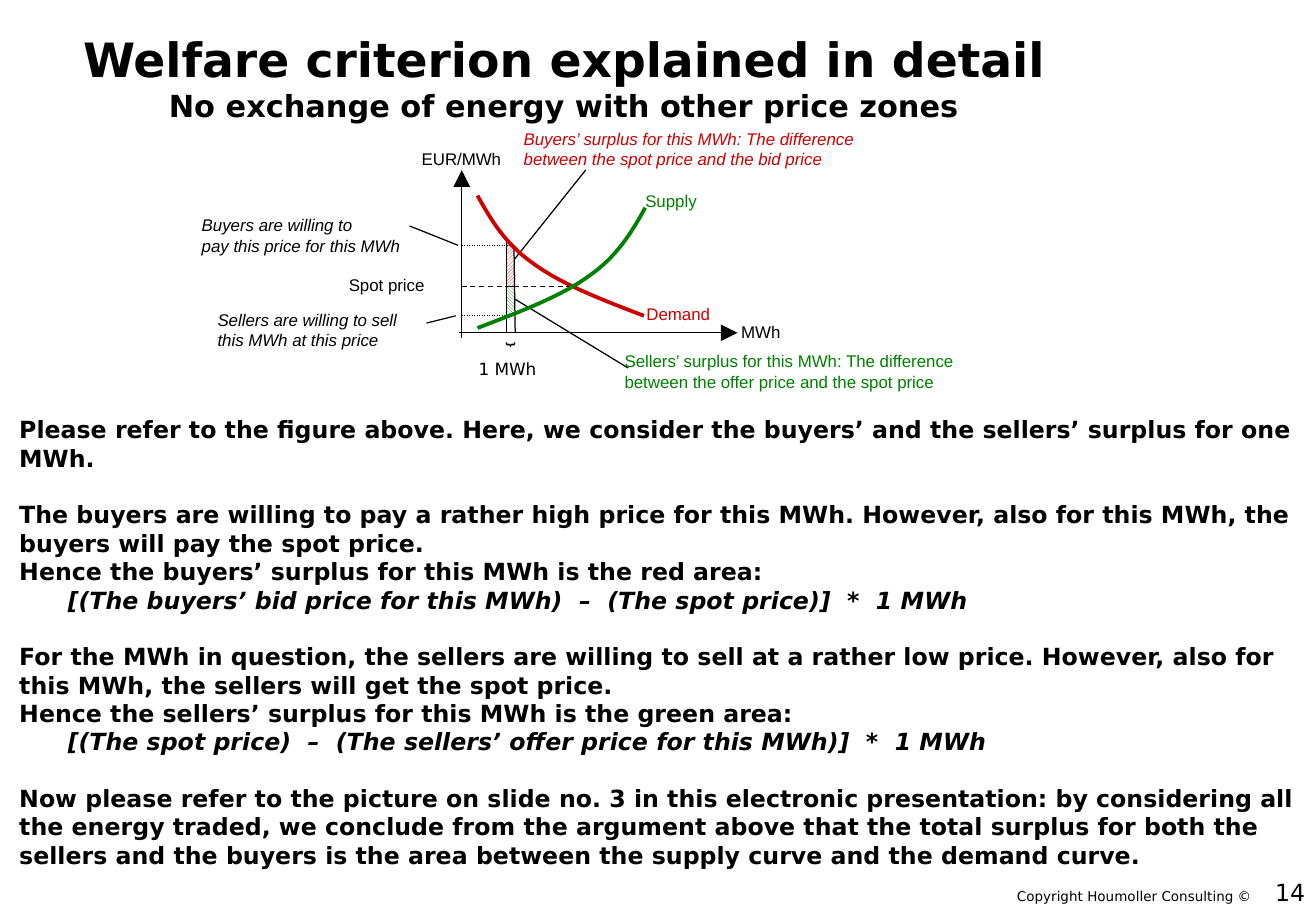
from lxml.etree import SubElement
from pptx import Presentation
from pptx.dml.color import RGBColor
from pptx.enum.dml import MSO_LINE, MSO_PATTERN
from pptx.enum.shapes import MSO_CONNECTOR
from pptx.enum.text import MSO_ANCHOR, PP_ALIGN
from pptx.oxml.ns import qn
from pptx.util import Pt

PX = 9144
BLACK, WHITE, RED, GREEN = "000000", "FFFFFF", "CC0000", "008000"
HEADING_FONT, LABEL_FONT = "DejaVu Sans", "Arial"


def px(length):
    return length * PX


def color(value):
    return RGBColor.from_string(value)


class WelfareSlide:
    def __init__(self, deck):
        self.slide = deck.slides.add_slide(deck.slide_layouts[6])
        self.shapes = self.slide.shapes

    def text(self, box, paragraphs, size=10, font=LABEL_FONT, ink=BLACK, bold=False,
             italic=False, align=PP_ALIGN.LEFT, anchor=MSO_ANCHOR.TOP,
             insets=(10, 5), wrap=True, rotation=0):
        holder = self.shapes.add_textbox(*map(px, box))
        holder.rotation = rotation
        frame = holder.text_frame
        frame.word_wrap = wrap
        frame.vertical_anchor = anchor
        frame.margin_left = frame.margin_right = px(insets[0])
        frame.margin_top = frame.margin_bottom = px(insets[1])
        for index, content in enumerate(paragraphs):
            wording, changes = content if isinstance(content, tuple) else (content, {})
            paragraph = frame.paragraphs[0] if index == 0 else frame.add_paragraph()
            paragraph.alignment = align
            if "indent" in changes:
                paragraph._p.get_or_add_pPr().set("marL", str(px(changes["indent"])))
            if "before" in changes:
                paragraph.space_before = Pt(changes["before"])
            run = paragraph.add_run()
            run.text = wording
            run.font.name = font
            run.font.size = Pt(changes.get("size", size))
            run.font.bold = bold
            run.font.italic = changes.get("italic", italic)
            run.font.color.rgb = color(ink)

    def label(self, box, lines, ink=BLACK, italic=False):
        self.text(box, lines, ink=ink, italic=italic, insets=(9, 4))

    def line(self, start, end, dash=None, arrow=False):
        connector = self.shapes.add_connector(
            MSO_CONNECTOR.STRAIGHT, *map(px, start + end))
        connector.line.color.rgb = color(BLACK)
        connector.line.width = Pt(0.75)
        if dash:
            connector.line.dash_style = dash
        if arrow:
            SubElement(connector.line._get_or_add_ln(), qn("a:headEnd"),
                       type="triangle", w="lg", len="lg")
        SubElement(connector._element.spPr, qn("a:effectLst"))

    def outline(self, points, close):
        builder = self.shapes.build_freeform(*points[0], scale=PX)
        builder.add_line_segments(points[1:], close=close)
        outline = builder.convert_to_shape()
        outline.shadow.inherit = False
        return outline

    def surplus(self, corners, ink, pattern):
        area = self.outline(corners, True)
        area.line.fill.background()
        area.fill.patterned()
        area.fill.pattern = pattern
        area.fill.fore_color.rgb = color(ink)
        area.fill.back_color.rgb = color(WHITE)

    def curve(self, points, ink):
        curve = self.outline(points, False)
        curve.fill.background()
        curve.line.color.rgb = color(ink)
        curve.line.width = Pt(2.25)
        geometry = next(curve._element.iter(qn("a:path")))
        segments = geometry.findall(qn("a:lnTo"))
        for first in range(0, len(segments), 3):
            bezier = SubElement(geometry, qn("a:cubicBezTo"))
            for segment in segments[first:first + 3]:
                bezier.append(segment[0])
                geometry.remove(segment)


def main():
    deck = Presentation()
    deck.slide_width, deck.slide_height = px(1083), px(750)
    page = WelfareSlide(deck)

    page.text((827, 726, 216, 24), ["Copyright Houmoller Consulting ©"],
              size=8, font=HEADING_FONT, wrap=False)
    page.text((858, 709, 226, 50), ["14"], size=14, font=HEADING_FONT,
              align=PP_ALIGN.RIGHT, anchor=MSO_ANCHOR.MIDDLE)

    section = {"before": 16.8}
    formula = {"indent": 40, "italic": True}
    page.text((6, 337, 1075, 387), [
        "Please refer to the figure above. Here, we consider the buyers’ and the sellers’ "
        "surplus for one MWh.",
        ("The buyers are willing to pay a rather high price for this MWh. However, also for "
         "this MWh, the buyers will pay the spot price.", section),
        "Hence the buyers’ surplus for this MWh is the red area:",
        ("[(The buyers’ bid price for this MWh)  –  (The spot price)]  *  1 MWh", formula),
        ("For the MWh in question, the sellers are willing to sell at a rather low price. "
         "However, also for this MWh, the sellers will get the spot price.", section),
        "Hence the sellers’ surplus for this MWh is the green area:",
        ("[(The spot price)  –  (The sellers’ offer price for this MWh)]  *  1 MWh", formula),
        ("Now please refer to the picture on slide no. 3 in this electronic presentation: by "
         "considering all the energy traded, we conclude from the argument above that the "
         "total surplus for both the sellers and the buyers is the area between the supply "
         "curve and the demand curve.", section),
    ], size=14, font=HEADING_FONT, bold=True)

    page.line((420, 244), (517, 303))
    page.line((419, 219), (482, 140))
    page.surplus([(417, 236), (423, 236), (423, 259), (417, 261)],
                 GREEN, MSO_PATTERN.LIGHT_DOWNWARD_DIAGONAL)
    page.surplus([(417, 198), (423, 205), (423, 236), (417, 236)],
                 RED, MSO_PATTERN.LIGHT_UPWARD_DIAGONAL)
    for price in (202, 260):
        page.line((380, price), (420, price), dash=MSO_LINE.ROUND_DOT)
    page.line((417, 198), (417, 273))
    page.line((423, 204), (424, 274))
    page.line((380, 236), (472, 236), dash=MSO_LINE.DASH)
    page.line((607, 274), (378, 274), arrow=True)
    page.curve([(393, 161), (404, 181), (416, 201), (439, 217),
                (462, 234), (496, 247), (530, 260)], RED)
    page.curve([(531, 171), (520, 191), (508, 211), (485, 227),
                (462, 244), (427, 257), (393, 270)], GREEN)

    page.label((523, 246, 178, 27), ["Demand"], RED)
    page.label((522, 153, 158, 27), ["Supply"], GREEN)
    page.label((278, 222, 239, 27), ["Spot price"])
    page.label((157, 173, 389, 45),
               ["Buyers are willing to", "pay this price for this MWh"], italic=True)
    page.line((377, 202), (337, 186))
    page.line((375, 260), (351, 266))
    page.line((417, 236), (423, 236))
    page.label((422, 102, 436, 45),
               ["Buyers’ surplus for this MWh: The difference",
                "between the spot price and the bid price"], RED, italic=True)
    page.label((505, 285, 394, 45),
               ["Sellers’ surplus for this MWh: The difference",
                "between the offer price and the spot price"], GREEN)
    page.label((601, 261, 161, 27), ["MWh"])
    page.label((338, 118, 161, 27), ["EUR/MWh"])
    page.label((170, 251, 389, 45),
               ["Sellers are willing to sell", "this MWh at this price"], italic=True)
    page.line((380, 140), (380, 278), arrow=True)

    page.text((-66, 1, 1060, 125),
              ["Welfare criterion explained in detail",
               ("No exchange of energy with other price zones", {"size": 18})],
              size=28, font=HEADING_FONT, bold=True,
              align=PP_ALIGN.CENTER, anchor=MSO_ANCHOR.MIDDLE)
    page.text((408, 274, 26, 20), ["}"], size=6, font=HEADING_FONT, bold=True,
              wrap=False, rotation=90)
    page.text((384, 290, 69, 27), ["1 MWh"], font=HEADING_FONT, wrap=False)

    deck.save("out.pptx")


if __name__ == "__main__":
    main()
